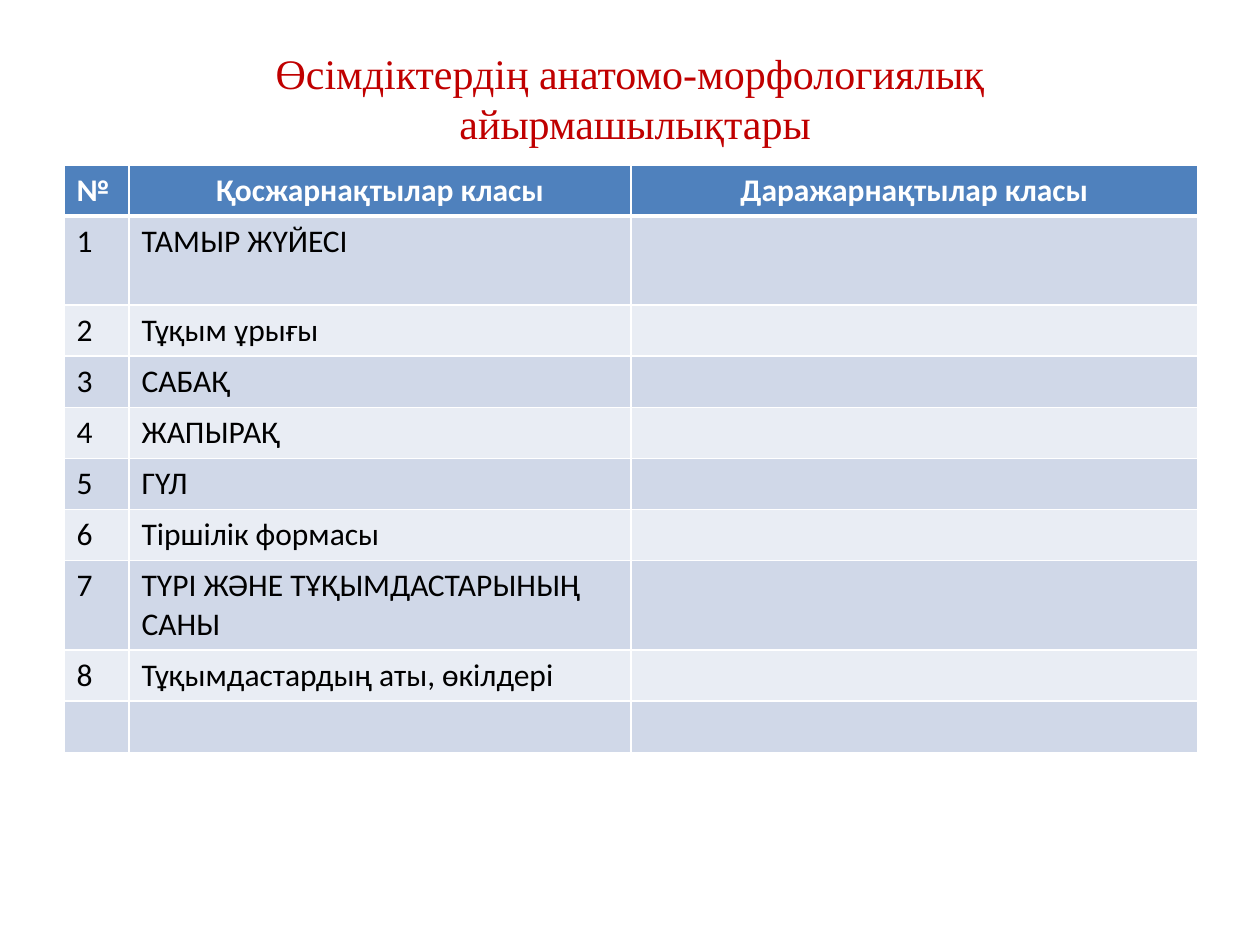
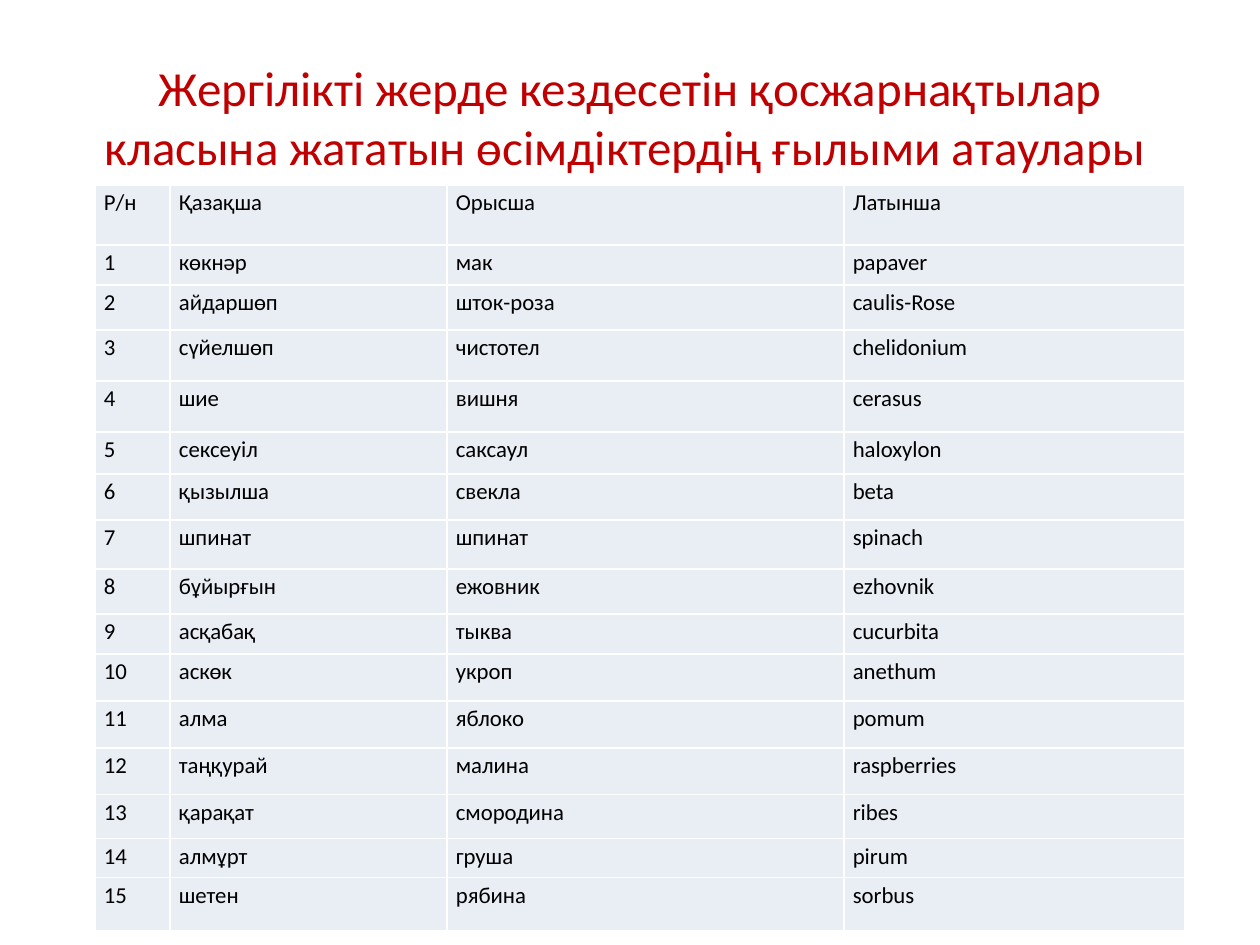
import pptx
import pptx.dml.color
import pptx.enum.text
import pptx.oxml
import pptx.oxml.ns
import pptx.util

RGBColor = pptx.dml.color.RGBColor
ALIGN = pptx.enum.text.PP_ALIGN

PX = 914400 // 126
RED = RGBColor(0xC0, 0x00, 0x00)
BLUE = RGBColor(0x4F, 0x81, 0xBD)
BAND = RGBColor(0xD0, 0xD8, 0xE8)
PALE = RGBColor(0xE9, 0xED, 0xF4)
WHITE = RGBColor(0xFF, 0xFF, 0xFF)
BLACK = RGBColor(0x00, 0x00, 0x00)

DIFFERENCE_HEADS = ("№", "Қосжарнақтылар класы", "Даражарнақтылар класы")
DIFFERENCES = [
    "ТАМЫР ЖҮЙЕСІ", "Тұқым ұрығы", "САБАҚ", "ЖАПЫРАҚ", "ГҮЛ",
    "Тіршілік формасы", "ТҮРІ ЖӘНЕ ТҰҚЫМДАСТАРЫНЫҢ САНЫ",
    "Тұқымдастардың аты, өкілдері",
]
PLANT_HEADS = ("Р/н", "Қазақша", "Орысша", "Латынша")
PLANTS = [
    ("көкнәр", "мак", "papaver"),
    ("айдаршөп", "шток-роза", "caulis-Rosе"),
    ("сүйелшөп", "чистотел", "chelidonium"),
    ("шие", "вишня", "cerasus"),
    ("сексеуіл", "саксаул", "haloxylon"),
    ("қызылша", "свекла", "beta"),
    ("шпинат", "шпинат", "spinach"),
    ("бұйырғын", "ежовник", "ezhovnik"),
    ("асқабақ", "тыква", "cucurbita"),
    ("аскөк", "укроп", "anethum"),
    ("алма", "яблоко", "pomum"),
    ("таңқурай", "малина", "raspberries"),
    ("қарақат", "смородина", "ribes"),
    ("алмұрт", "груша", "pirum"),
    ("шетен", "рябина", "sorbus"),
]

SLIDES = [
    {
        "title": "Өсімдіктердің анатомо-морфологиялық\v айырмашылықтары",
        "title_box": (63, 0, 1134, 195),
        "title_font": {"name": "Times New Roman", "size": pptx.util.Pt(24)},
        "rows": [DIFFERENCE_HEADS]
        + [(str(n), text, "") for n, text in enumerate(DIFFERENCES, 1)]
        + [("", "", "")],
        "corner": (64, 165),
        "widths": (65, 502, 567),
        "heights": (51, 89, 51, 51, 51, 51, 51, 89, 51, 51),
        "size": 18,
        "header": True,
        "margins": {},
        "spacing": {},
    },
    {
        "title": "Жергілікті жерде кездесетін қосжарнақтылар класына жататын "
                 "өсімдіктердің ғылыми атаулары ",
        "title_box": (63, 38, 1134, 157),
        "title_font": {"name": "Calibri", "size": pptx.util.Pt(28)},
        "rows": [PLANT_HEADS]
        + [(str(n), *names) for n, names in enumerate(PLANTS, 1)],
        "corner": (95, 185),
        "widths": (75, 277, 397, 341),
        "heights": (60, 40, 45, 51, 51, 42, 46, 49, 45, 40, 47, 47, 47, 44, 39, 53),
        "size": 13,
        "header": False,
        "margins": {"margin_left": 9 * PX, "margin_right": 9 * PX,
                    "margin_top": 0, "margin_bottom": 0},
        "spacing": {"line_spacing": 1.15, "space_after": pptx.util.Pt(10)},
    },
]


def apply(target, values):
    for key, value in values.items():
        setattr(target, key, value)


def set_font(paragraph, color, values):
    for run in paragraph.runs:
        apply(run.font, values)
        run.font.color.rgb = color


def add_borders(cell, widths):
    """Draw white borders; widths maps L, R, T and B to points."""
    properties = cell._tc.get_or_add_tcPr()
    for index, (side, points) in enumerate(widths.items()):
        properties.insert(index, pptx.oxml.parse_xml(
            f'<a:ln{side} {pptx.oxml.ns.nsdecls("a")} w="{points * 12700}">'
            f'<a:solidFill><a:srgbClr val="{WHITE}"/></a:solidFill></a:ln{side}>'))


def add_title(slide, content):
    title = slide.shapes.title
    box = (value * PX for value in content["title_box"])
    apply(title, dict(zip(("left", "top", "width", "height"), box)))
    frame = title.text_frame
    frame.text = content["title"]
    apply(frame, {"word_wrap": True,
                  "auto_size": pptx.enum.text.MSO_AUTO_SIZE.NONE,
                  "vertical_anchor": pptx.enum.text.MSO_ANCHOR.MIDDLE})
    frame.paragraphs[0].alignment = ALIGN.CENTER
    set_font(frame.paragraphs[0], RED, content["title_font"])


def add_table(slide, content):
    rows, widths, heights = content["rows"], content["widths"], content["heights"]
    left, top = content["corner"]
    table = slide.shapes.add_table(
        len(rows), len(widths), left * PX, top * PX,
        sum(widths) * PX, sum(heights) * PX).table
    header = content["header"]
    apply(table, {"first_row": header, "horz_banding": header})
    for column, width in zip(table.columns, widths):
        column.width = width * PX
    for row, height in zip(table.rows, heights):
        row.height = height * PX

    for r, texts in enumerate(rows):
        is_head = header and r == 0
        fill = BLUE if is_head else BAND if header and r % 2 else PALE
        borders = {"L": 1, "R": 1,
                   "T": 3 if header and r == 1 else 1,
                   "B": 3 if is_head else 1}
        for c, text in enumerate(texts):
            cell = table.cell(r, c)
            cell.text = text
            apply(cell, content["margins"])
            cell.fill.solid()
            cell.fill.fore_color.rgb = fill
            add_borders(cell, borders)
            paragraph = cell.text_frame.paragraphs[0]
            apply(paragraph, content["spacing"])
            if is_head and c:
                paragraph.alignment = ALIGN.CENTER
            set_font(paragraph, WHITE if is_head else BLACK,
                     {"name": "Calibri", "bold": is_head,
                      "size": pptx.util.Pt(content["size"])})


def main():
    deck = pptx.Presentation()
    deck.slide_width, deck.slide_height = 1260 * PX, 945 * PX
    for content in SLIDES:
        slide = deck.slides.add_slide(deck.slide_layouts[5])
        add_title(slide, content)
        add_table(slide, content)
    deck.save("out.pptx")


if __name__ == "__main__":
    main()
